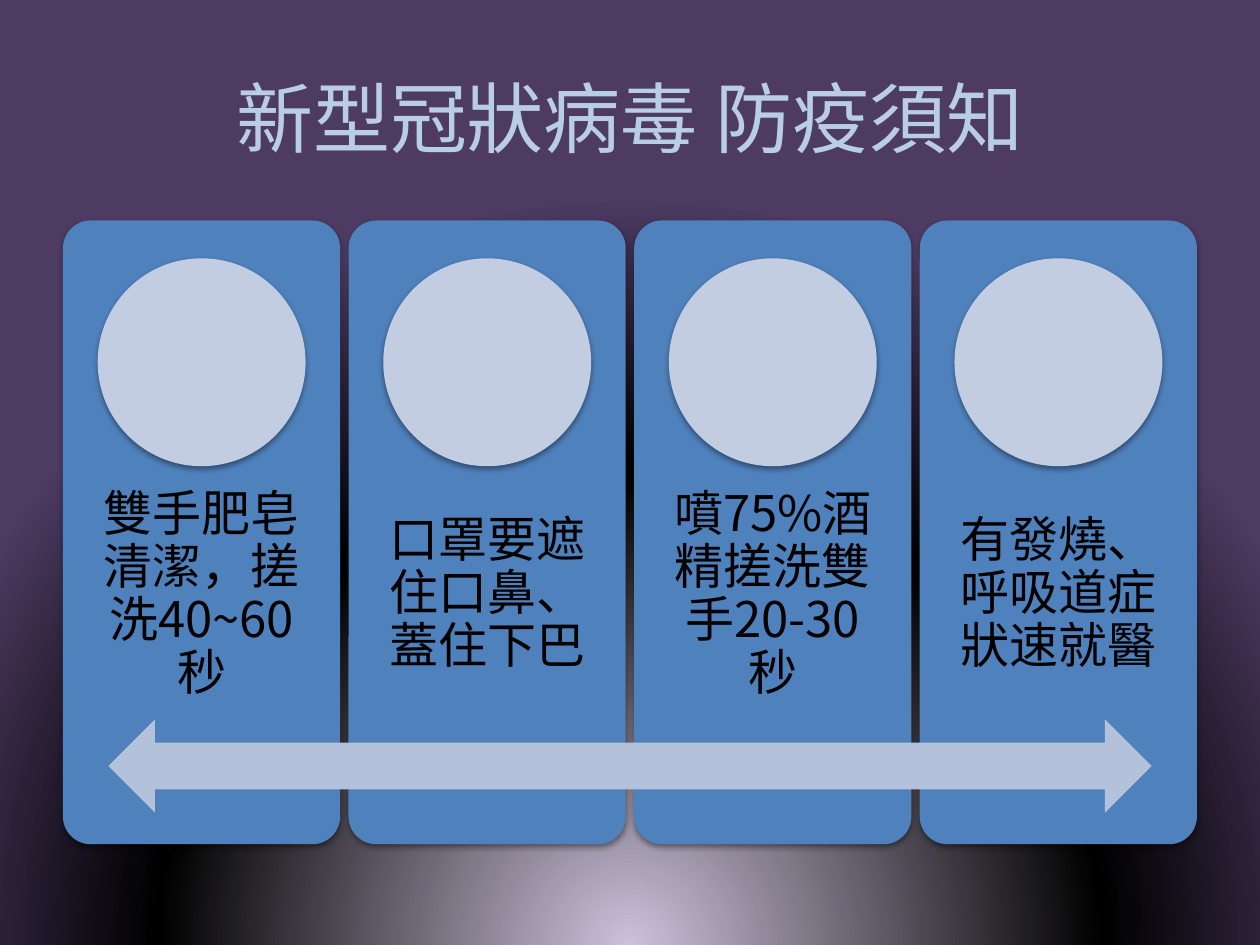
from pptx import Presentation
from pptx.dml.color import RGBColor
from pptx.enum.shapes import MSO_SHAPE as Shape
from pptx.enum.text import MSO_ANCHOR as Anchor, PP_ALIGN as Align
from pptx.oxml import parse_xml
from pptx.oxml.ns import nsdecls
from pptx.util import Inches, Pt

TITLE = "新型冠狀病毒 防疫須知"
ADVICE = [
    "雙手肥皂清潔，搓洗40~60秒",
    "口罩要遮住口鼻、蓋住下巴",
    "噴75%酒精搓洗雙手20-30秒",
    "有發燒、呼吸道症狀速就醫",
]
FONT = "Noto Sans CJK JP"
COLORS = {
    "title": "B9CDE5",
    "text": "000000",
    "card": "4F81BD",
    "circle": "C2CDE1",
    "arrow": "B3C1DB",
    "shadow": "000000",
}
GRADIENT = [(0, "CCC1DA"), (60, "000000"), (95, "4D3B62")]

LEFT, TOP, WIDTH, HEIGHT = 0.5, 1.75, 9, 4.95
CARD_WIDTH = 2.2
CARD_STEP = (WIDTH - CARD_WIDTH) / (len(ADVICE) - 1)
CIRCLE_SIZE, CIRCLE_TOP = 1.65, 2.05
TEXT_TOP, TEXT_HEIGHT = TOP + HEIGHT * 0.4, HEIGHT * 0.4
ARROW_WIDTH, ARROW_HEIGHT = WIDTH * 0.92, 0.74


def set_background(slide):
    stops = "".join(
        f'<a:gs pos="{position * 1000}"><a:srgbClr val="{color}"/></a:gs>'
        for position, color in GRADIENT
    )
    background = parse_xml(
        f'<p:bg {nsdecls("p", "a")}><p:bgPr><a:gradFill rotWithShape="1">'
        f'<a:gsLst>{stops}</a:gsLst><a:path path="circle">'
        '<a:fillToRect l="50000" t="130000" r="50000" b="-30000"/></a:path>'
        "</a:gradFill><a:effectLst/></p:bgPr></p:bg>"
    )
    slide.element.cSld.insert(0, background)


def write_text(shape, text, size, color, margin=0.1, spacing=1.0):
    frame = shape.text_frame
    frame.word_wrap = True
    frame.vertical_anchor = Anchor.MIDDLE
    frame.margin_left = frame.margin_right = Inches(margin)
    frame.margin_top = frame.margin_bottom = Inches(margin)
    paragraph = frame.paragraphs[0]
    paragraph.alignment = Align.CENTER
    paragraph.line_spacing = spacing
    run = paragraph.add_run()
    run.text = text
    run.font.size = Pt(size)
    run.font.name = FONT
    run.font.color.rgb = RGBColor.from_string(COLORS[color])
    properties = run.font._element
    properties.append(parse_xml(f'<a:ea {nsdecls("a")} typeface="{FONT}"/>'))


def add_figure(shapes, kind, box, color, shadow=False):
    shape = shapes.add_shape(kind, *map(Inches, box))
    shape.fill.solid()
    shape.fill.fore_color.rgb = RGBColor.from_string(COLORS[color])
    shape.line.fill.background()
    shape.shadow.inherit = False
    if shadow:
        effects = shape.element.spPr.find(
            "{http://schemas.openxmlformats.org/drawingml/2006/main}effectLst"
        )
        effects.append(parse_xml(
            f'<a:outerShdw {nsdecls("a")} blurRad="{Pt(3.1)}" dist="{Pt(1.6)}" '
            f'dir="5400000" rotWithShape="0"><a:srgbClr val="{COLORS["shadow"]}">'
            '<a:alpha val="38000"/></a:srgbClr></a:outerShdw>'
        ))
    return shape


def add_card(shapes, left, text):
    card = add_figure(shapes, Shape.ROUNDED_RECTANGLE,
                      (left, TOP, CARD_WIDTH, HEIGHT), "card", shadow=True)
    card.adjustments[0] = 0.1
    label = shapes.add_textbox(
        *map(Inches, (left, TEXT_TOP, CARD_WIDTH, TEXT_HEIGHT)))
    write_text(label, text, size=28, color="text", margin=0.22, spacing=0.9)
    circle_left = left + (CARD_WIDTH - CIRCLE_SIZE) / 2
    add_figure(shapes, Shape.OVAL,
               (circle_left, CIRCLE_TOP, CIRCLE_SIZE, CIRCLE_SIZE),
               "circle", shadow=True)


def main():
    presentation = Presentation()
    presentation.slide_width, presentation.slide_height = Inches(10), Inches(7.5)
    slide = presentation.slides.add_slide(presentation.slide_layouts[5])
    set_background(slide)

    title = slide.shapes.title
    title.left, title.top = Inches(LEFT), Inches(0.3)
    title.width, title.height = Inches(WIDTH), Inches(1.25)
    write_text(title, TITLE, size=44, color="title")

    shapes = slide.shapes.add_group_shape().shapes
    for index, text in enumerate(ADVICE):
        add_card(shapes, LEFT + index * CARD_STEP, text)
    arrow_left = LEFT + (WIDTH - ARROW_WIDTH) / 2
    add_figure(shapes, Shape.LEFT_RIGHT_ARROW,
               (arrow_left, TEXT_TOP + TEXT_HEIGHT, ARROW_WIDTH, ARROW_HEIGHT),
               "arrow")
    presentation.save("out.pptx")


if __name__ == "__main__":
    main()
